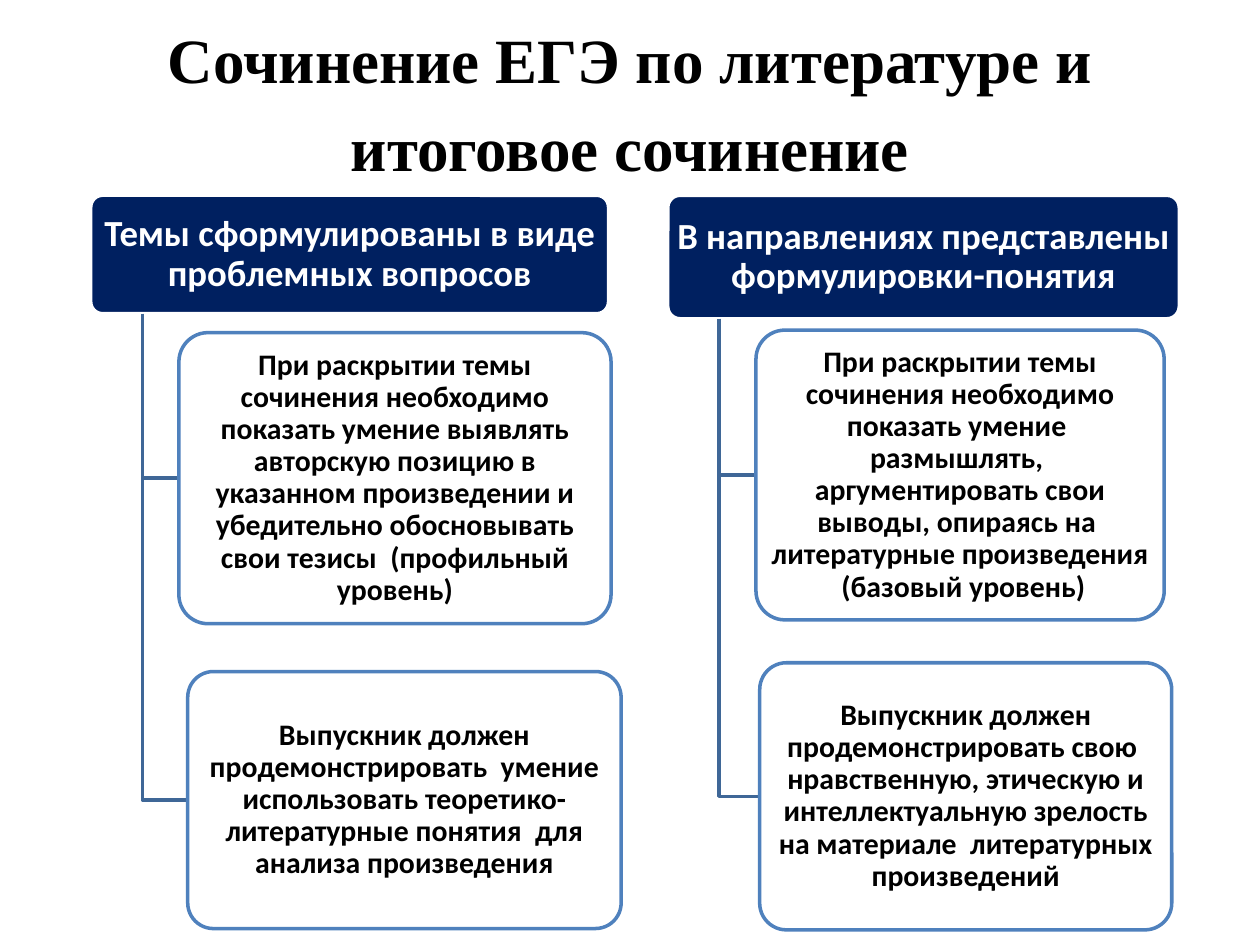
from pptx import Presentation
from pptx.dml.color import RGBColor
from pptx.enum.shapes import MSO_SHAPE as Kind
from pptx.enum.text import MSO_ANCHOR as Anchor, MSO_AUTO_SIZE as Fit, PP_ALIGN as Align
from pptx.oxml.ns import qn
from pptx.util import Inches, Pt
from lxml.etree import SubElement

NAVY, BLUE, STEEL = "002060", "4F81BD", "3F6797"
WHITE, BLACK = "FFFFFF", "000000"
GROUPS = [
    {
        "head": ((0.72, 1.55, 4.11, 0.94), "Темы сформулированы в виде проблемных вопросов"),
        "cards": [
            ((1.42, 2.64, 3.43, 2.31),
             "При раскрытии темы сочинения необходимо показать умение выявлять авторскую "
             "позицию в указанном произведении и убедительно обосновывать свои тезисы  "
             "(профильный уровень)"),
            ((1.49, 5.33, 3.44, 2.04),
             "Выпускник должен продемонстрировать  умение использовать "
             "теоретико-литературные понятия  для анализа произведения"),
        ],
    },
    {
        "head": ((5.3, 1.55, 4.06, 0.98), "В направлениях представлены формулировки-понятия"),
        "cards": [
            ((6, 2.62, 3.24, 2.3),
             "При раскрытии темы сочинения необходимо показать умение  размышлять,  "
             "аргументировать свои выводы, опираясь на  литературные произведения  "
             "(базовый уровень)"),
            ((6.03, 5.26, 3.27, 2.12),
             "Выпускник должен продемонстрировать свою  нравственную, этическую и "
             "интеллектуальную зрелость на материале  литературных произведений"),
        ],
    },
]


def rgb(code):
    """Turn a hex string into a colour."""
    return RGBColor.from_string(code)


class Deck:
    """Hold the style and the current slide."""

    def __init__(self, show):
        """Add a title-only slide."""
        self.slide = show.slides.add_slide(show.slide_layouts[5])
        self.font = "Calibri"
        self.width = Pt(2)

    def label(self, frame, text, size, color, font, space):
        """Set centred bold text in a frame."""
        frame.word_wrap = True
        frame.auto_size = Fit.NONE
        frame.vertical_anchor = Anchor.MIDDLE
        para = frame.paragraphs[0]
        para.text = text
        para.alignment = Align.CENTER
        para.line_spacing = space
        face = para.runs[0].font
        face.name, face.size, face.bold = font, Pt(size), True
        face.color.rgb = rgb(color)

    def title(self, box, text):
        """Place and fill the title."""
        shape = self.slide.shapes.title
        shape.left, shape.top, shape.width, shape.height = map(Inches, box)
        self.label(shape.text_frame, text, 36, BLACK, "Times New Roman", 1.16)

    def block(self, box, text, size, color, fill, line, pad, alpha=100):
        """Add a rounded block with text."""
        shape = self.slide.shapes.add_shape(Kind.ROUNDED_RECTANGLE, *map(Inches, box))
        shape.adjustments[0] = 0.1
        shape.shadow.inherit = False
        shape.fill.solid()
        shape.fill.fore_color.rgb = rgb(fill)
        if alpha < 100:
            tint = shape.element.spPr.find(qn("a:solidFill"))[0]
            SubElement(tint, qn("a:alpha"), val=str(alpha * 1000))
        shape.line.color.rgb = rgb(line)
        shape.line.width = self.width
        frame = shape.text_frame
        frame.margin_left = frame.margin_right = Inches(0.04)
        frame.margin_top = frame.margin_bottom = Inches(pad)
        self.label(frame, text, size, color, self.font, 0.9)

    def branch(self, head, card):
        """Draw an elbow from a heading to the side of a card."""
        x, y = head[0] + head[2] / 10, head[1] + head[3]
        mid = card[1] + card[3] / 2
        pen = self.slide.shapes.build_freeform(Inches(x), Inches(y))
        ends = [(Inches(x), Inches(mid)), (Inches(card[0]), Inches(mid))]
        pen.add_line_segments(ends, close=False)
        shape = pen.convert_to_shape()
        shape.shadow.inherit = False
        shape.fill.background()
        shape.line.color.rgb = rgb(STEEL)
        shape.line.width = self.width

    def group(self, head, cards):
        """Add a heading with its cards."""
        top, name = head
        self.block(top, name, 21, WHITE, NAVY, WHITE, 0.03)
        for box, text in cards:
            self.branch(top, box)
            self.block(box, text, 17, BLACK, WHITE, BLUE, 0.02, 90)


def main():
    """Build the slide and save it."""
    show = Presentation()
    show.slide_width, show.slide_height = Inches(10), Inches(7.5)
    deck = Deck(show)
    deck.title((0.5, 0.3, 9, 0.93), "Сочинение ЕГЭ по литературе и итоговое сочинение")
    for group in GROUPS:
        deck.group(**group)
    show.save("out.pptx")


if __name__ == "__main__":
    main()
